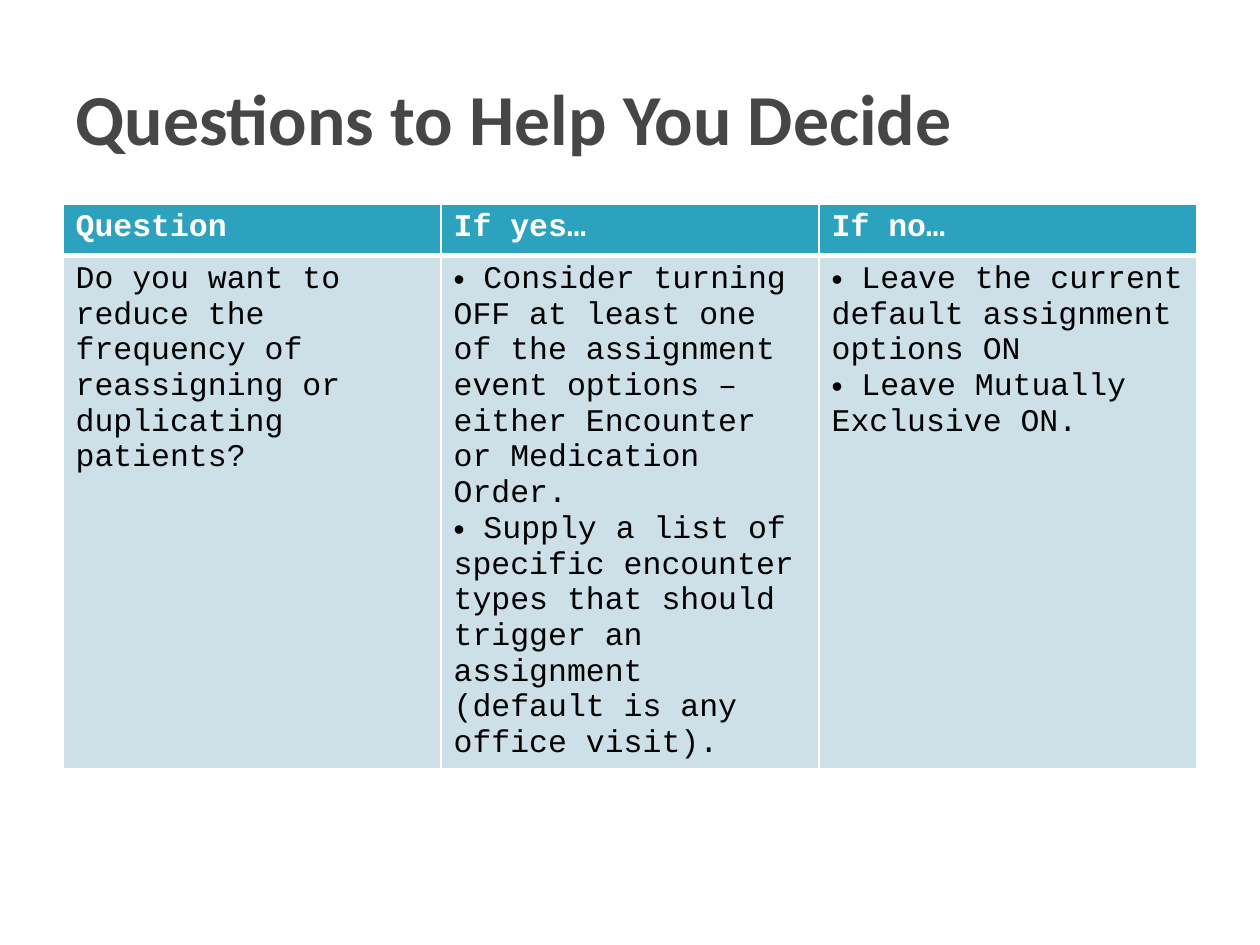
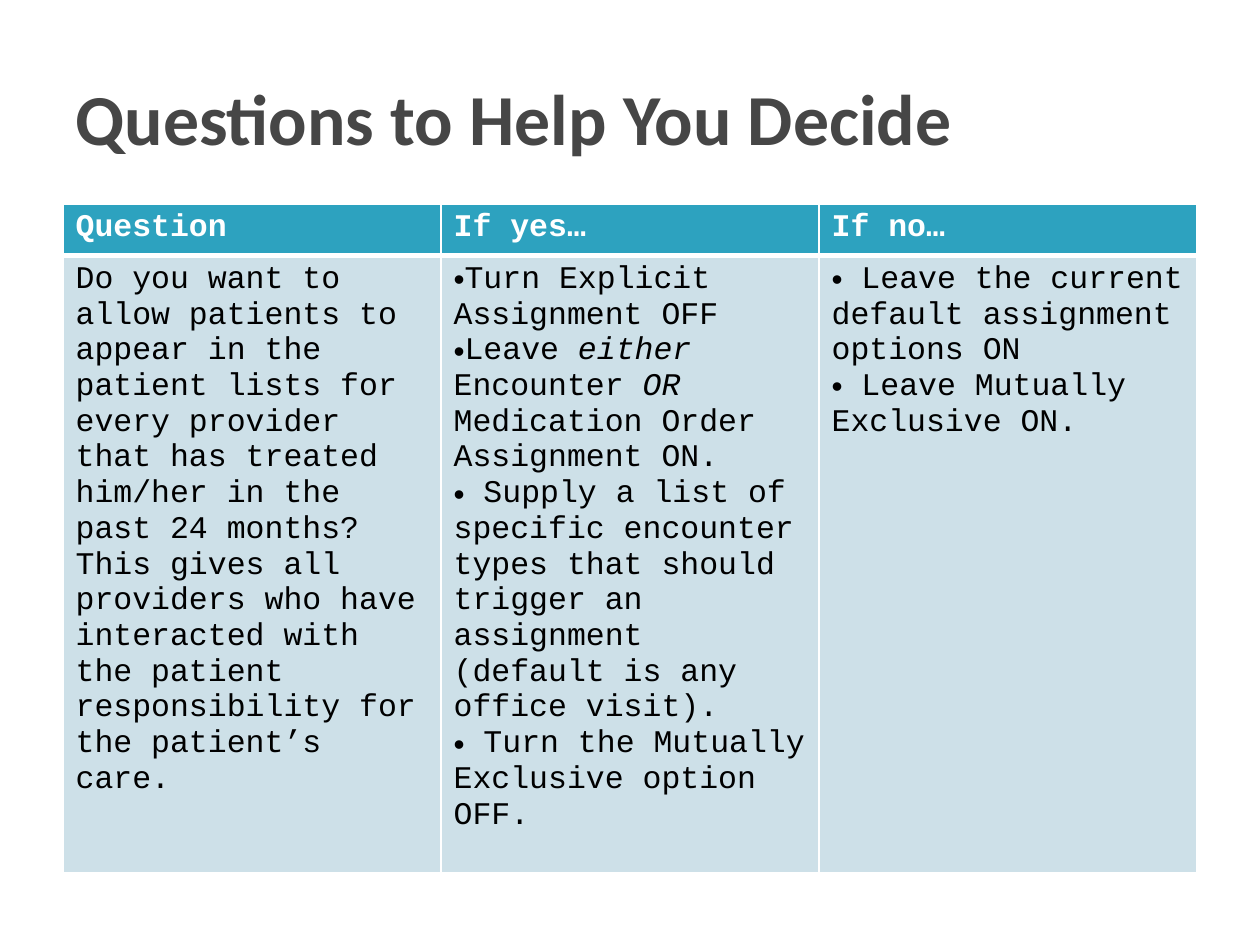
from lxml.etree import SubElement
from pptx import Presentation
from pptx.dml.color import RGBColor
from pptx.enum.text import MSO_ANCHOR
from pptx.oxml import parse_xml
from pptx.oxml.ns import nsdecls, qn
from pptx.util import Inches, Pt

# Shared look
TITLE_GREY = RGBColor(0x46, 0x46, 0x46)
HEADER_TEAL = RGBColor(0x2D, 0xA2, 0xBF)
BODY_BLUE = RGBColor(0xCD, 0xE0, 0xE8)
WHITE = RGBColor(0xFF, 0xFF, 0xFF)
BLACK = RGBColor(0, 0, 0)
TITLE_FONT, TABLE_FONT = "Calibri", "Courier New"

# Shared layout
SLIDE_WIDTH, SLIDE_HEIGHT = Inches(10), Inches(7.5)
MARGIN = int(SLIDE_WIDTH * 0.05)
CONTENT_WIDTH = SLIDE_WIDTH - 2 * MARGIN
TITLE_TOP, TITLE_HEIGHT = Inches(0.3), Inches(1.25)
TABLE_TOP, HEADER_HEIGHT = Inches(1.62), Inches(0.41)
THIN, THICK = Pt(1), Pt(3)

# Shared wording
TITLE = "Questions to Help You Decide"
HEADINGS = ["Question", "If yes…", "If no…"]
SUPPLY_LIST = (" Supply a list of specific encounter types that should trigger "
               "an assignment (default is any office visit).")
KEEP_DEFAULTS = [" Leave the current default assignment options ON",
                 " Leave Mutually Exclusive ON."]

# Each decision: question lines, advice for yes, height of the answer row.
# Advice in a list is cut into runs, every second one in italics.
DECISIONS = [
    (["Do you want to reduce the frequency of reassigning or duplicating patients?"],
     [" Consider turning OFF at least one of the assignment event options – "
      "either Encounter or Medication Order.",
      SUPPLY_LIST],
     Inches(4.06)),
    (["Do you want to allow patients to appear in the patient lists for every "
      "provider that has treated him/her in the past 24 months? ",
      "This gives all providers who have interacted with the patient "
      "responsibility for the patient’s care."],
     ["Turn Explicit Assignment OFF",
      ["Leave ", "either", " Encounter ", "OR", " Medication Order Assignment ON."],
      SUPPLY_LIST,
      " Turn the Mutually Exclusive option OFF."],
     Inches(4.63)),
]


def add_run(paragraph, text, font_name, size, color, bold=False, italic=False):
    run = paragraph.add_run()
    run.text = text
    font = run.font
    font.name, font.size, font.bold, font.italic = font_name, Pt(size), bold, italic
    font.color.rgb = color


def add_title(slide):
    box = slide.shapes.add_textbox(MARGIN, TITLE_TOP, CONTENT_WIDTH, TITLE_HEIGHT)
    frame = box.text_frame
    frame.word_wrap = True
    frame.vertical_anchor = MSO_ANCHOR.MIDDLE
    add_run(frame.paragraphs[0], TITLE, TITLE_FONT, 41, TITLE_GREY, bold=True)


def style_cell(cell, fill, top, bottom):
    """Fill a cell and rule its four edges in white."""
    cell.fill.solid()
    cell.fill.fore_color.rgb = fill
    edges = {"lnL": THIN, "lnR": THIN, "lnT": top, "lnB": bottom}
    properties = cell._tc.get_or_add_tcPr()
    for position, (edge, width) in enumerate(edges.items()):
        properties.insert(position, parse_xml(
            f'<a:{edge} {nsdecls("a")} w="{width}"><a:solidFill>'
            f'<a:srgbClr val="{WHITE}"/></a:solidFill></a:{edge}>'))


def add_bullet(paragraph):
    properties = paragraph._p.get_or_add_pPr()
    SubElement(properties, qn("a:buFont"), typeface="Arial")
    SubElement(properties, qn("a:buChar"), char="•")


def write_question(cell, lines):
    paragraph = cell.text_frame.paragraphs[0]
    for number, line in enumerate(lines):
        if number:
            paragraph.add_line_break()
        add_run(paragraph, line, TABLE_FONT, 18, BLACK)


def write_advice(cell, items):
    frame = cell.text_frame
    for number, item in enumerate(items):
        paragraph = frame.add_paragraph() if number else frame.paragraphs[0]
        add_bullet(paragraph)
        pieces = [item] if isinstance(item, str) else item
        for place, piece in enumerate(pieces):
            add_run(paragraph, piece, TABLE_FONT, 18, BLACK, italic=place % 2 == 1)


def add_decision_table(slide, question, if_yes, answer_height):
    table = slide.shapes.add_table(
        2, len(HEADINGS), MARGIN, TABLE_TOP, CONTENT_WIDTH,
        HEADER_HEIGHT + answer_height).table
    table.horz_banding = False
    table.rows[0].height, table.rows[1].height = HEADER_HEIGHT, answer_height

    # Header row
    for column, heading in enumerate(HEADINGS):
        header, answer = table.cell(0, column), table.cell(1, column)
        style_cell(header, HEADER_TEAL, THIN, THICK)
        style_cell(answer, BODY_BLUE, THICK, THIN)
        add_run(header.text_frame.paragraphs[0], heading, TABLE_FONT, 18, WHITE, bold=True)

    # Question and advice row
    write_question(table.cell(1, 0), question)
    write_advice(table.cell(1, 1), if_yes)
    write_advice(table.cell(1, 2), KEEP_DEFAULTS)


def main():
    deck = Presentation()
    deck.slide_width, deck.slide_height = SLIDE_WIDTH, SLIDE_HEIGHT
    for question, if_yes, answer_height in DECISIONS:
        slide = deck.slides.add_slide(deck.slide_layouts[6])
        add_decision_table(slide, question, if_yes, answer_height)
        add_title(slide)
    deck.save("out.pptx")


if __name__ == "__main__":
    main()
